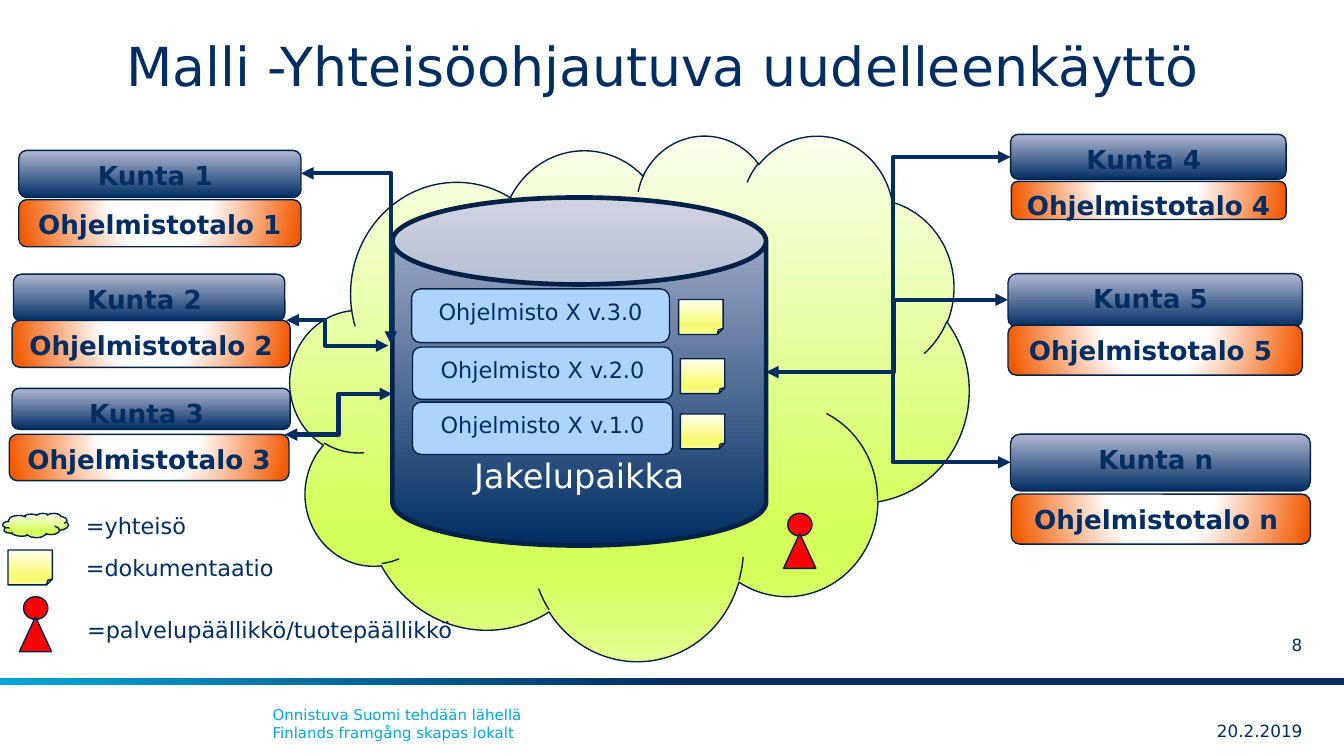
import dataclasses

import lxml.etree
import pptx
import pptx.dml.color
import pptx.enum.shapes
import pptx.enum.text
import pptx.oxml.ns
import pptx.util

Pt = pptx.util.Pt
qn = pptx.oxml.ns.qn
SHAPE = pptx.enum.shapes.MSO_SHAPE
ALIGN = pptx.enum.text.PP_ALIGN
ANCHOR = pptx.enum.text.MSO_ANCHOR


def rgb(code):
    return pptx.dml.color.RGBColor.from_string(code)


def sub(parent, tag, **attributes):
    return lxml.etree.SubElement(
        parent, qn(tag), {key: str(value) for key, value in attributes.items()})


@dataclasses.dataclass(frozen=True)
class Gradient:
    """Stops as (percent, colour); without an angle it spreads from the middle."""
    stops: tuple
    angle: int | None = None


@dataclasses.dataclass(frozen=True)
class Theme:
    font: str = "DejaVu Sans"
    ink: str = "002E63"
    outline: str = "002249"
    arrow: str = "002D61"
    accent: str = "00A6D6"
    white: str = "FFFFFF"
    version: str = "ADD3FF"
    person: str = "FF0000"
    bar: Gradient = Gradient(((50, "002E63"), (100, "00A6D6")), 180)
    navy: Gradient = Gradient(((0, "002E63"), (100, "B1B7D1")), 270)
    orange: Gradient = Gradient(((0, "FFFFFF"), (35, "FFFFFF"), (100, "F25900")))
    lime: Gradient = Gradient(
        ((0, "FAFFED"), (74, "D5FF5A"), (83, "D5FF5A"), (100, "E3FF91")), 90)
    yellow: Gradient = Gradient(
        ((0, "FEFFEF"), (74, "F7FB73"), (83, "F7FB73"), (100, "FAFCA2")), 90)
    title_size: float = 28.8
    store_size: float = 18
    partner_size: float = 14
    body_size: float = 12
    small_size: float = 9
    footer_size: float = 8


class SlideBuilder:
    def __init__(self, slide, theme):
        self.slide = slide
        self.theme = theme

    def set_text(self, holder, text, size, color, align, anchor, bold=False):
        frame = holder.text_frame
        frame.text = text
        frame.vertical_anchor = anchor
        for paragraph in frame.paragraphs:
            paragraph.alignment = align
            for run in paragraph.runs:
                run.font.name = self.theme.font
                run.font.size = Pt(size)
                run.font.bold = bold
                run.font.color.rgb = rgb(color)

    def text(self, box, text, size, color=None, align=ALIGN.LEFT,
             anchor=ANCHOR.TOP, wrap=True, margins=(7.2, 3.6)):
        label = self.slide.shapes.add_textbox(*map(Pt, box))
        frame = label.text_frame
        frame.word_wrap = wrap
        frame.margin_left = frame.margin_right = Pt(margins[0])
        frame.margin_top = frame.margin_bottom = Pt(margins[1])
        self.set_text(label, text, size, color or self.theme.ink, align, anchor)

    def paint(self, shape, fill):
        if isinstance(fill, str):
            shape.fill.solid()
            shape.fill.fore_color.rgb = rgb(fill)
            return
        shape.fill.gradient()
        gradient = shape._element.spPr.find(qn("a:gradFill"))
        for child in list(gradient):
            gradient.remove(child)
        stops = sub(gradient, "a:gsLst")
        for percent, color in fill.stops:
            sub(sub(stops, "a:gs", pos=percent * 1000), "a:srgbClr", val=color)
        if fill.angle is None:
            spread = sub(gradient, "a:path", path="circle")
            sub(spread, "a:fillToRect", l=50000, t=-80000, r=50000, b=180000)
        else:
            sub(gradient, "a:lin", ang=fill.angle * 60000, scaled=0)

    def shape(self, kind, box, fill, line=0.75, parent=None):
        shapes = (parent or self.slide).shapes
        shape = shapes.add_shape(kind, *map(Pt, box))
        shape.shadow.inherit = False
        self.paint(shape, fill)
        if line:
            shape.line.color.rgb = rgb(self.theme.outline)
            shape.line.width = Pt(line)
        else:
            shape.line.fill.background()
        return shape

    def label_box(self, box, fill, text, size, bold=False):
        shape = self.shape(SHAPE.ROUNDED_RECTANGLE, box, fill)
        self.set_text(shape, text, size, self.theme.ink, ALIGN.CENTER, ANCHOR.TOP, bold)

    def partner(self, box, fill, text):
        self.label_box(box, fill, text, self.theme.partner_size, bold=True)

    def document(self, x, y):
        self.shape(SHAPE.FOLDED_CORNER, (x, y, 23.8, 18.7), self.theme.yellow)

    def person(self, x, y):
        figure = self.slide.shapes.add_group_shape()
        red = self.theme.person
        self.shape(SHAPE.OVAL, (x + 2.2, y, 13, 12.2), red, parent=figure)
        self.shape(SHAPE.ISOSCELES_TRIANGLE, (x, y + 10.8, 17.3, 18.7), red,
                   parent=figure)

    def elbow(self, start, end, bend=0.5, both_heads=True, single_bend=False):
        """Elbow arrow; bend is the turning point as a share of the width."""
        connector = self.slide.shapes.add_connector(
            pptx.enum.shapes.MSO_CONNECTOR.ELBOW, *map(Pt, start + end))
        connector.line.color.rgb = rgb(self.theme.arrow)
        connector.line.width = Pt(2.25)
        properties = connector._element.spPr
        geometry = properties.find(qn("a:prstGeom"))
        if single_bend:
            geometry.set("prst", "bentConnector2")
        elif bend != 0.5:
            sub(geometry.find(qn("a:avLst")), "a:gd", name="adj1",
                fmla=f"val {round(bend * 100000)}")
        line = properties.find(qn("a:ln"))
        if both_heads:
            sub(line, "a:headEnd", type="triangle")
        sub(line, "a:tailEnd", type="triangle")
        sub(properties, "a:effectLst")


def main():
    deck = pptx.Presentation()
    deck.slide_width, deck.slide_height = Pt(720), Pt(405)
    theme = Theme()
    page = SlideBuilder(deck.slides.add_slide(deck.slide_layouts[6]), theme)

    page.shape(SHAPE.RECTANGLE, (0, 363.5, 720, 3.6), theme.bar, line=0)
    page.text((139, 374.4, 470.9, 26.6),
              "Onnistuva Suomi tehdään lähellä\vFinlands framgång skapas lokalt",
              theme.footer_size, theme.accent)
    page.shape(SHAPE.CLOUD, (155.5, 72, 363.6, 281.5), theme.lime)
    page.text((53.3, 16.6, 612.7, 38.9), "Malli -Yhteisöohjautuva uudelleenkäyttö ",
              theme.title_size, align=ALIGN.CENTER, anchor=ANCHOR.BOTTOM,
              margins=(0, 3.6))
    for box, text in (((626.4, 383.8, 71.3, 15.8), "20.2.2019"),
                      ((666.7, 337.7, 31, 15.8), "8")):
        page.text(box, text, theme.small_size, align=ALIGN.RIGHT,
                  anchor=ANCHOR.MIDDLE, margins=(0, 0))

    store = page.shape(SHAPE.CAN, (210.2, 105.8, 200.2, 186.5), theme.navy, line=2.5)
    page.set_text(store, "Jakelupaikka", theme.store_size, theme.white,
                  ALIGN.CENTER, ANCHOR.BOTTOM)

    partners = (
        ("1", (10.1, 80.6, 151.2, 25.2), (10.1, 107, 151.2, 25.2)),
        ("2", (7.2, 146.9, 145.4, 25.2), (6.5, 171.6, 149, 25.2)),
        ("3", (6.5, 208.1, 149, 21.9), (5, 232.7, 149.8, 24.8)),
        ("4", (541.4, 72, 147.6, 24), (541.8, 97.2, 147.2, 20.4)),
        ("5", (540, 146.6, 157.7, 28.8), (540, 174.2, 157.7, 26.8)),
        ("n", (541.4, 232.6, 160.6, 30.4), (541.8, 264.7, 160.2, 26.8)),
    )
    for number, municipality, _ in partners:
        page.partner(municipality, theme.navy, f"Kunta {number} ")

    page.elbow((417.6, 199.4), (540, 160.6), both_heads=False)
    page.elbow((415.4, 199.4), (541.4, 247.7), both_heads=False)
    page.elbow((410.4, 199.4), (541.4, 84.2), bend=0.52)

    versions = (
        ("3.0", (220.5, 154.8, 138.2, 28.8), (363.6, 160.5)),
        ("2.0", (221, 185.9, 139.4, 28.1), (364.5, 192.2)),
        ("1.0", (221, 215.4, 139.4, 28.1), (364.5, 221.8)),
    )
    for number, box, document in versions:
        page.label_box(box, theme.version, f"Ohjelmisto X v.{number}", theme.body_size)
        page.document(*document)

    page.elbow((161.3, 92.9), (209.5, 184.3), single_bend=True)
    page.elbow((208.1, 185.2), (153.4, 171.6), bend=0.62)
    page.elbow((210.2, 211), (152.6, 232.8))
    page.person(419.8, 275)

    page.shape(SHAPE.CLOUD, (1.4, 275, 35.3, 13), theme.lime)
    page.document(4.3, 294.7)
    page.person(10.4, 319.7)
    for box, meaning in (((38.9, 270.7, 68.4, 21.6), "yhteisö"),
                         ((38.9, 293.2, 115.9, 21.6), "dokumentaatio"),
                         ((39.6, 326.4, 213.1, 21.6), "palvelupäällikkö/tuotepäällikkö")):
        page.text(box, f"={meaning}", theme.body_size, wrap=False)

    for number, _, software_house in partners:
        page.partner(software_house, theme.orange, f"Ohjelmistotalo {number} ")

    deck.save("out.pptx")


if __name__ == "__main__":
    main()
